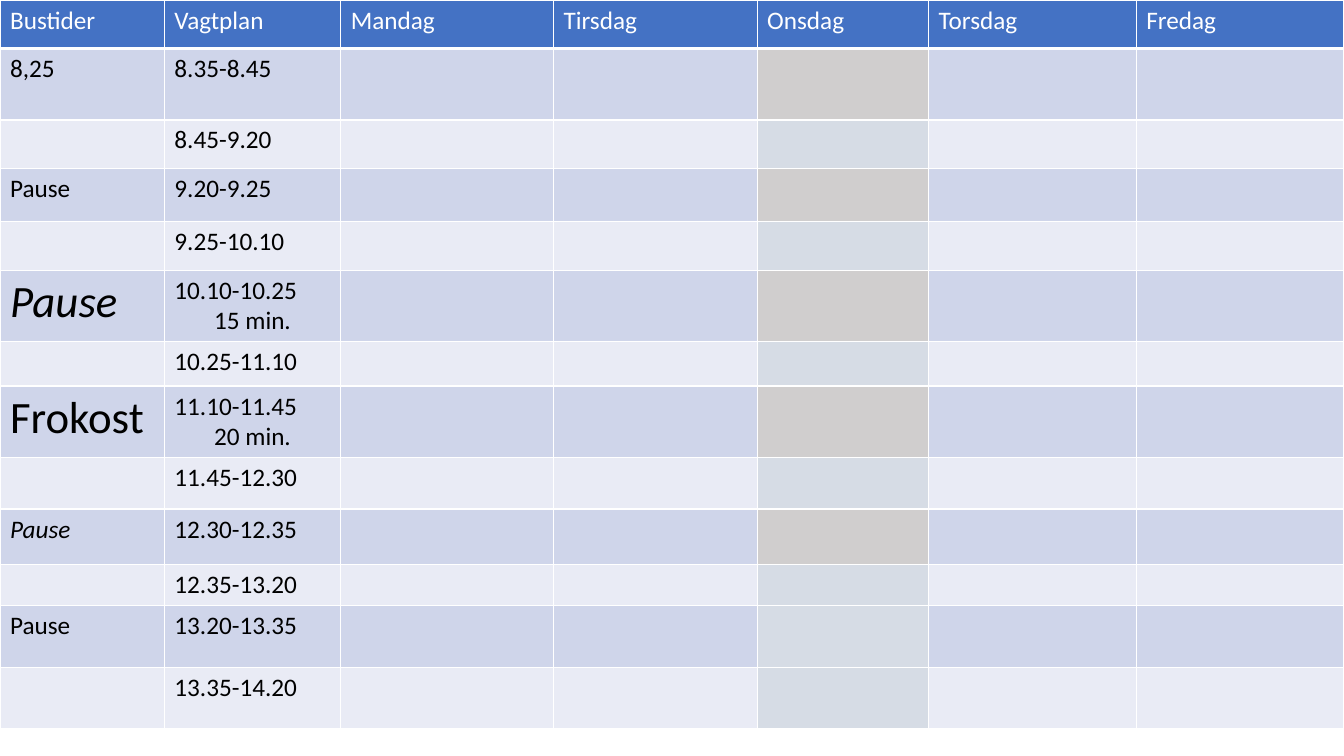
import pptx
import pptx.dml.color
import pptx.enum.text
import pptx.oxml
import pptx.oxml.ns
import pptx.util
from pptx.util import Inches

RGBColor = pptx.dml.color.RGBColor
WHITE = RGBColor(0xFF, 0xFF, 0xFF)
BLACK = RGBColor(0x00, 0x00, 0x00)
HEADER = RGBColor(0x44, 0x72, 0xC4)
BANDS = (RGBColor(0xE9, 0xEB, 0xF5), RGBColor(0xCF, 0xD5, 0xEA))
WEDNESDAY_BANDS = (RGBColor(0xD6, 0xDC, 0xE5), RGBColor(0xD0, 0xCE, 0xCE))

DAYS = ["Bustider", "Vagtplan", "Mandag", "Tirsdag", "Onsdag", "Torsdag", "Fredag"]
COL_WIDTHS = [1.63, 1.75, 2.11, 2.02, 1.7, 2.06, 2.06]
WEDNESDAY = DAYS.index("Onsdag")
LAST_GREY_ROW = 9

# label, time, row height, label size, label italic
SHIFTS = [
    ("8,25", "8.35-8.45", 0.71, 18, False),
    ("", "8.45-9.20", 0.48, 18, False),
    ("Pause", "9.20-9.25", 0.53, 18, False),
    ("", "9.25-10.10", 0.48, 18, False),
    ("Pause", "10.10-10.25\n15 min.", 0.71, 32, True),
    ("", "10.25-11.10", 0.44, 18, False),
    ("Frokost", "11.10-11.45\n20 min.", 0.71, 32, False),
    ("", "11.45-12.30", 0.51, 18, False),
    ("Pause", "12.30-12.35", 0.55, 18, True),
    ("", "12.35-13.20", 0.41, 18, False),
    ("Pause", "13.20-13.35", 0.61, 18, False),
    ("", "13.35-14.20", 0.61, 18, False),
]
HEADER_HEIGHT = 0.48


def set_borders(cell, bottom):
    """Draw white borders round a cell, with the given bottom width in points."""
    tcPr = cell._tc.get_or_add_tcPr()
    for side, width in (("L", 1), ("R", 1), ("T", 1), ("B", bottom)):
        tcPr.append(pptx.oxml.parse_xml(
            f'<a:ln{side} {pptx.oxml.ns.nsdecls("a")} w="{pptx.util.Pt(width)}">'
            f'<a:solidFill><a:srgbClr val="{WHITE}"/></a:solidFill></a:ln{side}>'))


def fill_cell(cell, text, fill, color=BLACK, size=18, italic=False, bottom=1):
    """Give a cell its text, font, borders and fill."""
    set_borders(cell, bottom)
    cell.fill.solid()
    cell.fill.fore_color.rgb = fill
    if not text:
        return
    tf = cell.text_frame
    tf.text = text
    for p in tf.paragraphs[1:]:
        p.alignment = pptx.enum.text.PP_ALIGN.CENTER
    for p in tf.paragraphs:
        for r in p.runs:
            r.font.name = "Calibri"
            r.font.size = pptx.util.Pt(size)
            r.font.italic = italic
            r.font.color.rgb = color


def main():
    """Build the weekly duty roster slide."""
    prs = pptx.Presentation()
    prs.slide_width, prs.slide_height = Inches(13.33), Inches(7.5)
    s = prs.slides.add_slide(prs.slide_layouts[6])

    heights = [HEADER_HEIGHT] + [shift[2] for shift in SHIFTS]
    table = s.shapes.add_table(
        len(heights), len(DAYS), 0, 0,
        Inches(sum(COL_WIDTHS)), Inches(sum(heights))).table
    table.first_row = table.horz_banding = False
    for column, width in zip(table.columns, COL_WIDTHS):
        column.width = Inches(width)
    for row, height in zip(table.rows, heights):
        row.height = Inches(height)

    for col, day in enumerate(DAYS):
        fill_cell(table.cell(0, col), day, HEADER, color=WHITE, bottom=3)
    for row, (label, time, _, size, italic) in enumerate(SHIFTS, 1):
        fill_cell(table.cell(row, 0), label, BANDS[row % 2], size=size, italic=italic)
        fill_cell(table.cell(row, 1), time, BANDS[row % 2])
        for col in range(2, len(DAYS)):
            fill = BANDS[row % 2]
            if col == WEDNESDAY:
                fill = WEDNESDAY_BANDS[row % 2 if row <= LAST_GREY_ROW else 0]
            fill_cell(table.cell(row, col), "", fill)

    prs.save("out.pptx")


if __name__ == "__main__":
    main()
